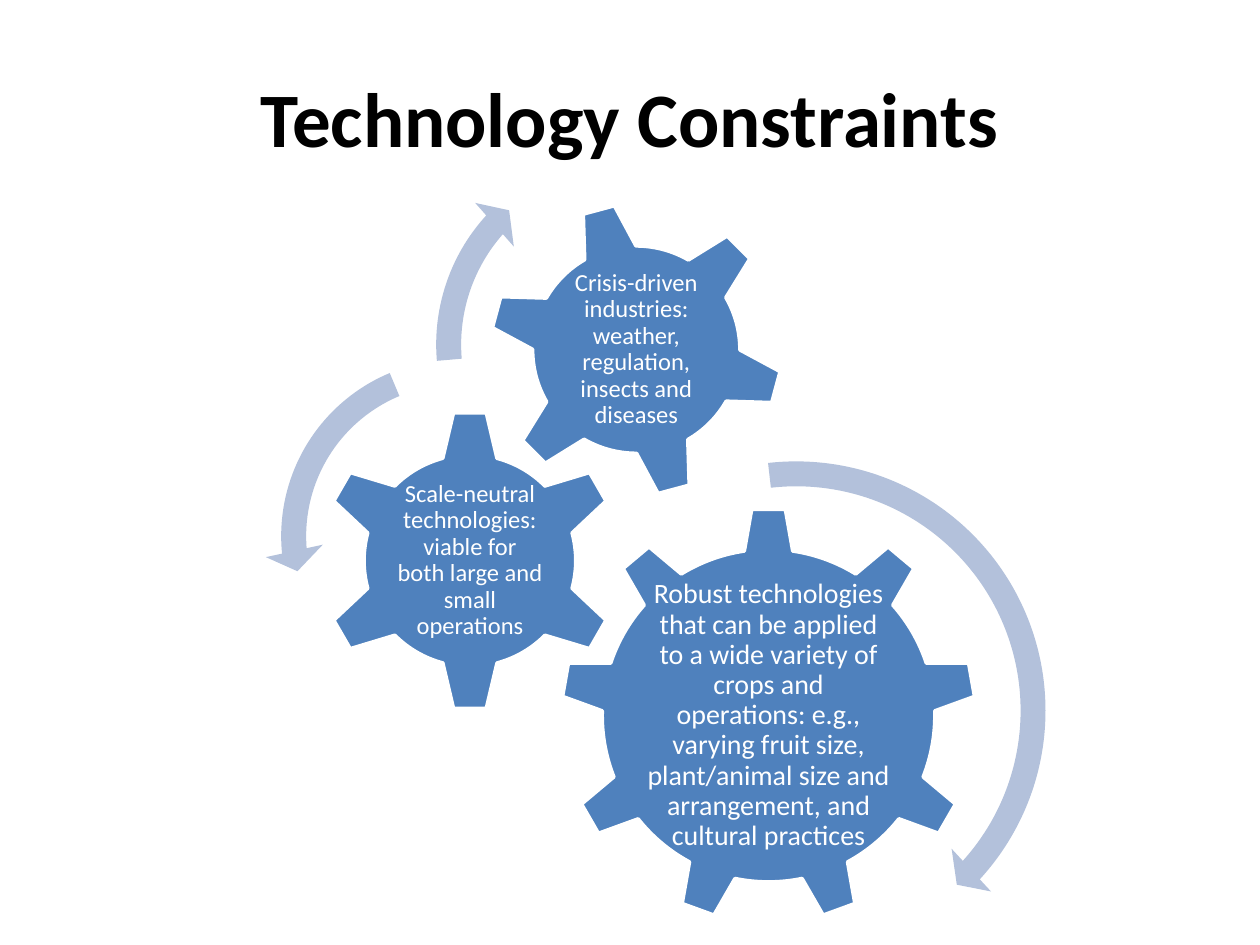
from pptx import Presentation
from pptx import util as u
from pptx.dml.color import RGBColor
from pptx.enum import shapes, text

COLUMNS, ROWS = 100, 75  # grid over the slide
Shape = shapes.MSO_SHAPE


def color(hex_string):
    return RGBColor.from_string(hex_string)


class GearSlide:
    FONT = "Calibri"
    BLACK, WHITE = "000000", "FFFFFF"
    GEAR, ARROW = "4F81BD", "B3C1DB"

    def __init__(self, presentation):
        self.slide = presentation.slides.add_slide(presentation.slide_layouts[6])
        self.cell_width = presentation.slide_width / COLUMNS
        self.cell_height = presentation.slide_height / ROWS

    def box(self, center, size):
        """Turn a centre and a size in grid cells into left, top, width, height."""
        (x, y), (width, height) = center, size
        return (u.Emu(round((x - width / 2) * self.cell_width)),
                u.Emu(round((y - height / 2) * self.cell_height)),
                u.Emu(round(width * self.cell_width)),
                u.Emu(round(height * self.cell_height)))

    def label(self, words, center, size, points, hex_string,
              bold=False, inset=0.02, line_spacing=0.9):
        frame = self.slide.shapes.add_textbox(*self.box(center, size)).text_frame
        frame.word_wrap = True
        frame.vertical_anchor = text.MSO_ANCHOR.MIDDLE
        frame.margin_left = frame.margin_right = u.Inches(inset)
        frame.margin_top = frame.margin_bottom = u.Inches(inset)
        paragraph = frame.paragraphs[0]
        paragraph.text = words
        paragraph.alignment = text.PP_ALIGN.CENTER
        paragraph.line_spacing = line_spacing
        font = paragraph.font
        font.name, font.size, font.bold = self.FONT, u.Pt(points), bold
        font.color.rgb = color(hex_string)

    def shape(self, kind, center, diameter, fill):
        shape = self.slide.shapes.add_shape(
            kind, *self.box(center, (diameter, diameter)))
        shape.shadow.inherit = False
        shape.fill.solid()
        shape.fill.fore_color.rgb = color(fill)
        return shape

    def gear(self, kind, center, diameter, words, text_size, points, rotation=0):
        gear = self.shape(kind, center, diameter, self.GEAR)
        gear.rotation = rotation
        gear.line.color.rgb = color(self.WHITE)
        gear.line.width = u.Pt(2)
        self.label(words, center, text_size, points, self.WHITE)

    def arrow(self, kind, center, diameter, band, head, angles):
        """Band and head are percent of the size; angles are in degrees."""
        arrow = self.shape(kind, center, diameter, self.ARROW)
        arrow.line.fill.background()
        # Angles are stored in 1/60000 degree, adjustments in 1/100000
        values = [band / 100, *(angle * 0.6 for angle in angles), head / 100]
        for index, value in enumerate(values):
            arrow.adjustments[index] = value


def main():
    presentation = Presentation()
    presentation.slide_width, presentation.slide_height = u.Inches(10), u.Inches(7.5)
    page = GearSlide(presentation)

    # Title
    page.label("Technology Constraints", (50, 9.25), (90, 12.5), 44, page.BLACK,
               bold=True, inset=0.1, line_spacing=1)

    # Gears with their labels
    page.gear(Shape.GEAR_9, (61, 56.8), 33,
              "Robust technologies that can be applied to a wide variety of crops "
              "and operations: e.g., varying fruit size, plant/animal size and "
              "arrangement, and cultural practices", (19.7, 17), 16)
    page.gear(Shape.GEAR_6, (37.3, 44.5), 24,
              "Scale-neutral technologies: viable for both large and small "
              "operations", (11.9, 11.8), 14)
    page.gear(Shape.GEAR_6, (50.5, 27.75), 23.5,
              "Crisis-driven industries: weather, regulation, insects and diseases",
              (13.2, 13.2), 14, rotation=345)

    # Arrows showing how the gears turn
    page.arrow(Shape.CIRCULAR_ARROW, (63.2, 56.4), 42.2, 4.69, 5.47,
               (4.98, 42.34, 263.5))
    page.arrow(Shape.LEFT_CIRCULAR_ARROW, (36.35, 42.55), 30.7, 6.45, 7.53,
               (7.17, 174.82, 247.3))
    page.arrow(Shape.CIRCULAR_ARROW, (49.85, 27.35), 33.1, 5.98, 6.98,
               (6.57, 221.9, 175.14))

    presentation.save("out.pptx")


if __name__ == "__main__":
    main()
